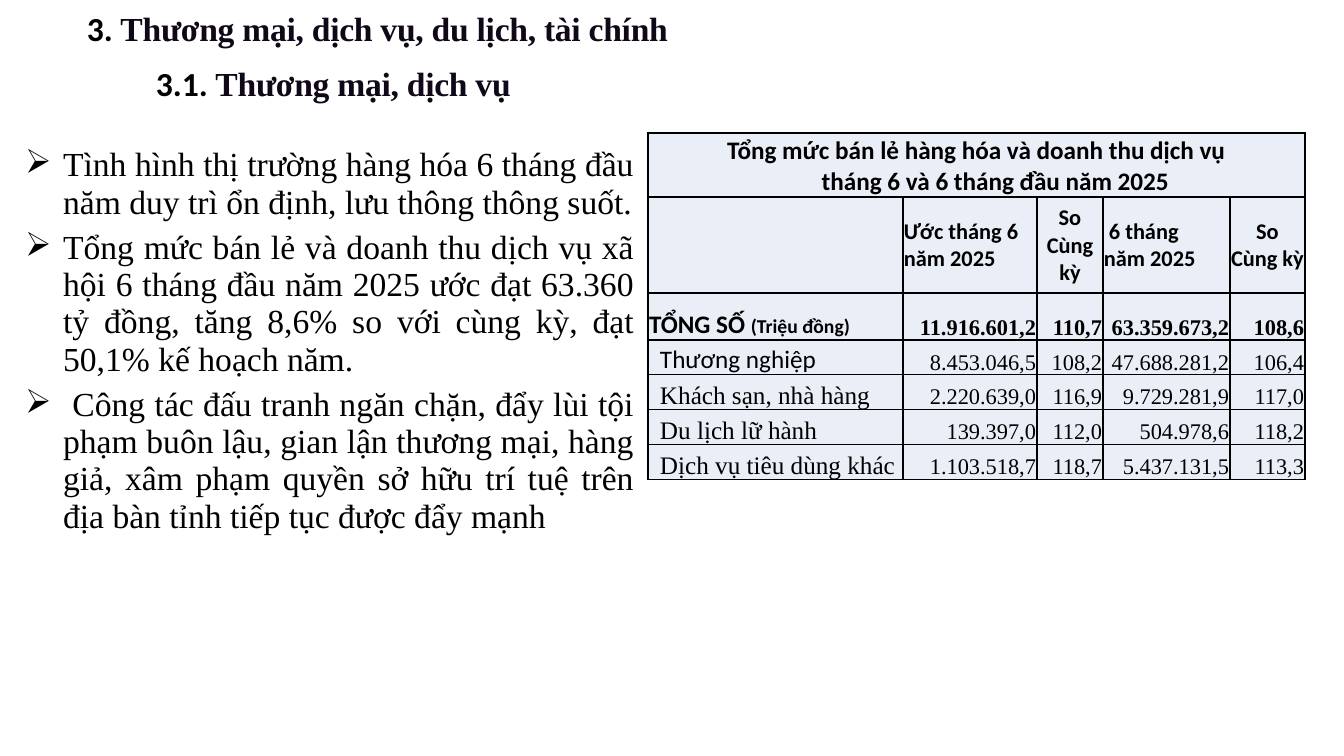
"""Builds a slide on trade and services with bullet points and a retail sales table."""
from lxml.etree import SubElement
from pptx import Presentation
from pptx.dml.color import RGBColor
from pptx.enum.text import MSO_ANCHOR as Anchor, MSO_AUTO_SIZE as AutoSize, PP_ALIGN as Align
from pptx.oxml import parse_xml
from pptx.oxml.ns import nsdecls, qn
from pptx.util import Pt

BLACK = RGBColor(0x00, 0x00, 0x00)
INK = RGBColor(0x10, 0x07, 0x17)
PALE_BLUE = RGBColor(0xEA, 0xEF, 0xF7)
SANS, SERIF = "Calibri", "Times New Roman"
PX = 914400 / 100.8
PLAIN_STYLE = "{2D5ABB26-0587-4C30-8999-92F81FD0307C}"

HEADINGS = [
    (77, 3, "3. ", "Thương mại, dịch vụ, du lịch, tài chính"),
    (146, 58, "3.1. ", "Thương mại, dịch vụ"),
]
BULLETS = [
    "Tình hình thị trường hàng hóa 6 tháng đầu năm duy trì ổn định, lưu thông thông suốt.",
    "Tổng mức bán lẻ và doanh thu dịch vụ xã hội 6 tháng đầu năm 2025 ước đạt 63.360 tỷ đồng, "
    "tăng 8,6% so với cùng kỳ, đạt 50,1% kế hoạch năm.",
    " Công tác đấu tranh ngăn chặn, đẩy lùi tội phạm buôn lậu, gian lận thương mại, hàng giả, "
    "xâm phạm quyền sở hữu trí tuệ trên địa bàn tỉnh tiếp tục được đẩy mạnh",
]
TABLE_TITLE = [
    ("Tổng mức bán lẻ hàng hóa và doanh thu dịch vụ", 0),
    ("tháng 6 và 6 tháng đầu năm 2025", 38),
]
COLUMN_HEADS = [
    ([("Ước tháng 6 năm 2025", 0)], Align.LEFT),
    ([("So Cùng kỳ", 0)], Align.CENTER),
    ([("6 tháng", 5), ("năm 2025", 0)], Align.LEFT),
    ([("So Cùng kỳ", 0)], Align.CENTER),
]
TOTAL_LABEL, TOTAL_UNIT = "TỔNG SỐ ", "(Triệu đồng)"
TOTALS = ["11.916.601,2", "110,7", "63.359.673,2", "108,6"]
SECTORS = [
    ("Thương nghiệp", SANS, ["8.453.046,5", "108,2", "47.688.281,2", "106,4"]),
    ("Khách sạn, nhà hàng", SERIF, ["2.220.639,0", "116,9", "9.729.281,9", "117,0"]),
    ("Du lịch lữ hành", SERIF, ["139.397,0", "112,0", "504.978,6", "118,2"]),
    ("Dịch vụ tiêu dùng khác", SERIF, ["1.103.518,7", "118,7", "5.437.131,5", "113,3"]),
]
COLUMN_WIDTHS = [255, 134, 66, 127, 75]
ROW_HEIGHTS = [64, 96, 47, 35, 35, 35, 35]


def px(*lengths):
    return [round(length * PX) for length in lengths]


def add_span(para, text, size, face, bold=False, color=BLACK):
    span = para.add_run()
    span.text = text
    span.font.size = Pt(size)
    span.font.name = face
    span.font.bold = bold
    span.font.color.rgb = color
    return span


def set_indent(para, left, first=0):
    properties = para._p.get_or_add_pPr()
    for name, length in zip(("marL", "indent"), px(left, first)):
        properties.set(name, str(length))
    return properties


def next_para(frame, index):
    return frame.add_paragraph() if index else frame.paragraphs[0]


def add_heading(page, left, top, number, title):
    box = page.shapes.add_textbox(*px(left, top, 749, 50))
    frame = box.text_frame
    frame.word_wrap = True
    frame.auto_size = AutoSize.SHAPE_TO_FIT_TEXT
    para = frame.paragraphs[0]
    add_span(para, number, 24, SANS, True)
    span = add_span(para, title, 24, SERIF, True, INK)
    span._r.get_or_add_rPr().set("spc", "-20")


def add_plain_table(page, left, top, widths, heights):
    area = px(left, top, sum(widths), sum(heights))
    table = page.shapes.add_table(len(heights), len(widths), *area).table
    table.first_row = table.horz_banding = False
    table._tbl.tblPr.find(qn("a:tableStyleId")).text = PLAIN_STYLE
    for column, width in zip(table.columns, px(*widths)):
        column.width = width
    for row, height in zip(table.rows, px(*heights)):
        row.height = height
    return table


def add_bullets(page):
    cell = add_plain_table(page, 15, 126, [629], [430]).cell(0, 0)
    cell.fill.background()
    cell.vertical_anchor = Anchor.MIDDLE
    for index, text in enumerate(BULLETS):
        para = next_para(cell.text_frame, index)
        properties = set_indent(para, 38, -38)
        SubElement(properties, qn("a:buChar")).set("char", "➢")
        para.alignment = Align.JUSTIFY
        para.space_after = Pt(6)
        add_span(para, text, 24, SERIF)


def style_cell(cell):
    cell.fill.solid()
    cell.fill.fore_color.rgb = PALE_BLUE
    cell.vertical_anchor = Anchor.BOTTOM
    cell.margin_left, cell.margin_top, cell.margin_right, cell.margin_bottom = px(1, 1, 1, 0)
    properties = cell._tc.get_or_add_tcPr()
    for index, side in enumerate("LRTB"):
        properties.insert(index, parse_xml(
            f'<a:ln{side} {nsdecls("a")} w="{Pt(1)}"><a:solidFill>'
            f'<a:srgbClr val="{BLACK}"/></a:solidFill></a:ln{side}>'))


def write_lines(cell, lines, align, size, face, bold):
    for index, (text, indent) in enumerate(lines):
        para = next_para(cell.text_frame, index)
        para.alignment = align
        if indent:
            set_indent(para, indent)
        add_span(para, text, size, face, bold)


def add_sales(page):
    table = add_plain_table(page, 648, 133, COLUMN_WIDTHS, ROW_HEIGHTS)
    for cell in table.iter_cells():
        style_cell(cell)
    table.cell(0, 0).merge(table.cell(0, len(COLUMN_WIDTHS) - 1))
    write_lines(table.cell(0, 0), TABLE_TITLE, Align.CENTER, 18, SANS, True)
    for column, (lines, align) in enumerate(COLUMN_HEADS, 1):
        head = table.cell(1, column)
        head.vertical_anchor = Anchor.MIDDLE
        write_lines(head, lines, align, 16, SANS, True)

    total = table.cell(2, 0).text_frame.paragraphs[0]
    add_span(total, TOTAL_LABEL, 18, SANS, True)
    add_span(total, TOTAL_UNIT, 14, SANS, True)
    for row, (name, face, _) in enumerate(SECTORS, 3):
        label = table.cell(row, 0)
        label.margin_left = px(12)[0]
        write_lines(label, [(name, 0)], Align.LEFT, 18, face, False)
    for row, values in enumerate([TOTALS] + [sector[2] for sector in SECTORS], 2):
        for column, value in enumerate(values, 1):
            write_lines(table.cell(row, column), [(value, 0)], Align.RIGHT, 16, SERIF, row == 2)


def main():
    deck = Presentation()
    deck.slide_width, deck.slide_height = px(1344, 756)
    page = deck.slides.add_slide(deck.slide_layouts[6])
    for heading in HEADINGS:
        add_heading(page, *heading)
    add_bullets(page)
    add_sales(page)
    deck.save("out.pptx")


if __name__ == "__main__":
    main()
